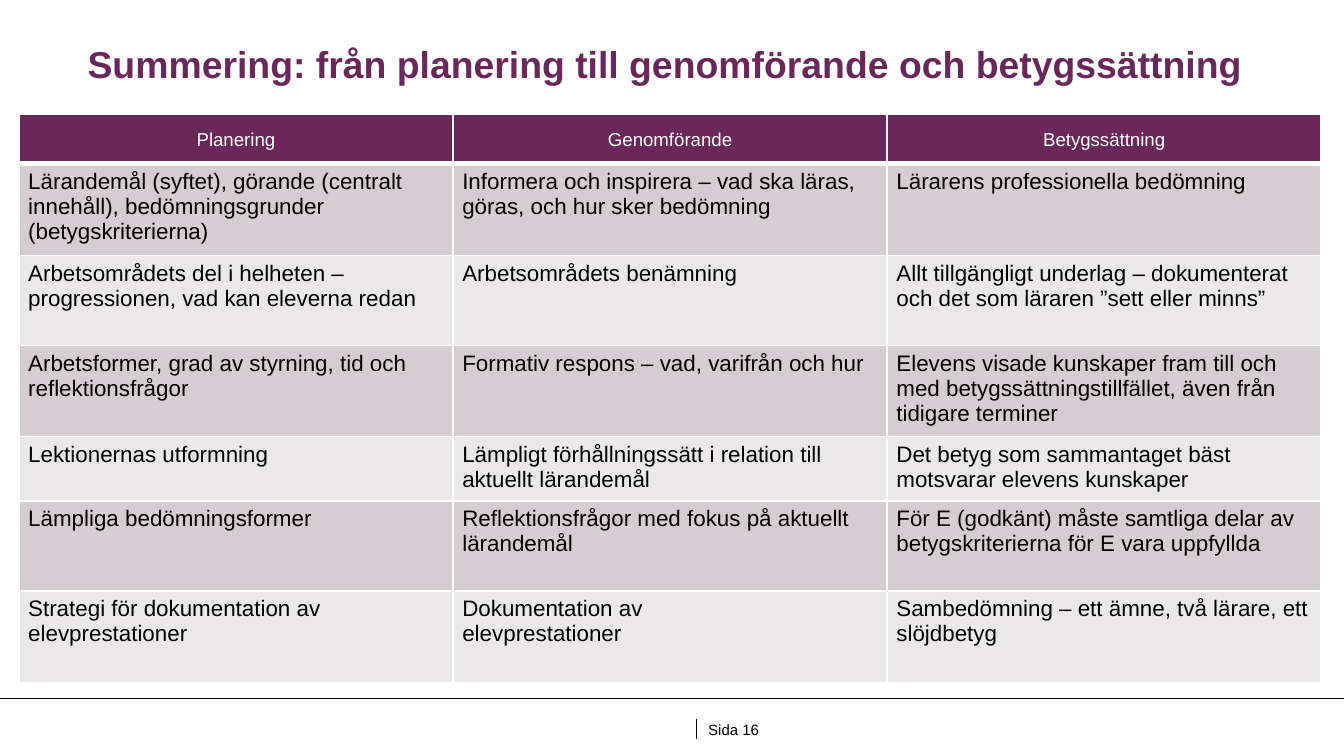
from lxml import etree
from pptx import Presentation
from pptx.dml.color import RGBColor
from pptx.enum.shapes import MSO_CONNECTOR
from pptx.enum.text import MSO_ANCHOR, PP_ALIGN
from pptx.oxml.ns import qn
from pptx.util import Inches, Pt

STRAIGHT = MSO_CONNECTOR.STRAIGHT
TOP = MSO_ANCHOR.TOP
LEFT, CENTER = PP_ALIGN.LEFT, PP_ALIGN.CENTER

# Content: a line break in a cell starts a new paragraph
TITLE = "Summering: från planering till genomförande och betygssättning"
PAGE_LABEL = "Sida 16"
ROWS = [
    ("Planering", "Genomförande", "Betygssättning"),
    ("Lärandemål (syftet), görande (centralt innehåll), bedömningsgrunder (betygskriterierna)",
     "Informera och inspirera – vad ska läras, göras, och hur sker bedömning",
     "Lärarens professionella bedömning"),
    ("Arbetsområdets del i helheten – progressionen, vad kan eleverna redan",
     "Arbetsområdets benämning",
     "Allt tillgängligt underlag – dokumenterat och det som läraren ”sett eller minns”"),
    ("Arbetsformer, grad av styrning, tid och reflektionsfrågor",
     "Formativ respons – vad, varifrån och hur",
     "Elevens visade kunskaper fram till och med betygssättningstillfället, även från tidigare terminer"),
    ("Lektionernas utformning",
     "Lämpligt förhållningssätt i relation till aktuellt lärandemål",
     "Det betyg som sammantaget bäst motsvarar elevens kunskaper"),
    ("Lämpliga bedömningsformer",
     "Reflektionsfrågor med fokus på aktuellt lärandemål",
     "För E (godkänt) måste samtliga delar av betygskriterierna för E vara uppfyllda"),
    ("Strategi för dokumentation av elevprestationer",
     "Dokumentation av\nelevprestationer",
     "Sambedömning – ett ämne, två lärare, ett slöjdbetyg"),
]
ROW_HEIGHTS = [0.37, 0.68, 0.67, 0.67, 0.48, 0.67, 0.68]
COLUMN_WIDTH = 3.23

FONT = "Arial"
PLUM, BLACK, WHITE = "692859", "000000", "FFFFFF"
BANDS = ["EBE8EA", "D4CDD1"]


def color(value):
    return RGBColor.from_string(value)


def write(paragraph, text, size, text_color, bold=False, align=LEFT, spacing=None):
    paragraph.alignment = align
    if spacing:
        paragraph.line_spacing = spacing
    run = paragraph.add_run()
    run.text = text
    run.font.name = FONT
    run.font.size = Pt(size)
    run.font.bold = bold
    run.font.color.rgb = color(text_color)


def add_text_box(slide, box, margins, wrap=True):
    frame = slide.shapes.add_textbox(*map(Inches, box)).text_frame
    frame.word_wrap = wrap
    frame.vertical_anchor = TOP
    (frame.margin_left, frame.margin_top,
     frame.margin_right, frame.margin_bottom) = map(Inches, margins)
    return frame.paragraphs[0]


def add_line(slide, *ends):
    line = slide.shapes.add_connector(STRAIGHT, *map(Inches, ends))
    line.line.color.rgb = color(BLACK)
    line.line.width = Pt(0.5)
    etree.SubElement(line._element.spPr, qn("a:effectLst"))


def add_borders(cell, bottom_width):
    properties = cell._tc.get_or_add_tcPr()
    for side, width in {"L": 1, "R": 1, "T": 1, "B": bottom_width}.items():
        border = etree.SubElement(properties, qn(f"a:ln{side}"), w=str(Pt(width)))
        fill = etree.SubElement(border, qn("a:solidFill"))
        etree.SubElement(fill, qn("a:srgbClr"), val=WHITE)


def fill_cell(cell, text, row_index):
    header = row_index == 0
    add_borders(cell, 3 if header else 1)
    cell.fill.solid()
    cell.fill.fore_color.rgb = color(PLUM if header else BANDS[row_index % 2])
    cell.vertical_anchor = TOP
    cell.margin_left = cell.margin_right = Inches(0.07)
    cell.margin_top = cell.margin_bottom = Inches(0.04)
    for index, part in enumerate(text.split("\n")):
        frame = cell.text_frame
        paragraph = frame.add_paragraph() if index else frame.paragraphs[0]
        if header:
            write(paragraph, part, 10, WHITE, align=CENTER, spacing=1.5)
        else:
            write(paragraph, part, 12, BLACK)


# Widescreen slide, 16:9
presentation = Presentation()
presentation.slide_width = Inches(10)
presentation.slide_height = Inches(10 * 9 / 16)
slide = presentation.slides.add_slide(presentation.slide_layouts[6])

# Footer
add_line(slide, -0.01, 5.2, 10, 5.2)
write(add_text_box(slide, (5.27, 5.36, 0.5, 0.14), (0, 0, 0, 0), wrap=False),
      PAGE_LABEL, 8, BLACK)
add_line(slide, 5.18, 5.5, 5.18, 5.35)

# Title
write(add_text_box(slide, (0, 0.06, 10, 1.01), (0, 0.05, 0.1, 0.05)),
      TITLE, 20, PLUM, bold=True, align=CENTER, spacing=Pt(38))

# Summary table
column_count = len(ROWS[0])
table = slide.shapes.add_table(
    len(ROWS), column_count, Inches(0.14), Inches(0.85),
    Inches(COLUMN_WIDTH * column_count), Inches(sum(ROW_HEIGHTS))).table
for column in table.columns:
    column.width = Inches(COLUMN_WIDTH)
for row_index, (texts, height) in enumerate(zip(ROWS, ROW_HEIGHTS)):
    table.rows[row_index].height = Inches(height)
    for column_index, text in enumerate(texts):
        fill_cell(table.cell(row_index, column_index), text, row_index)

presentation.save("out.pptx")
